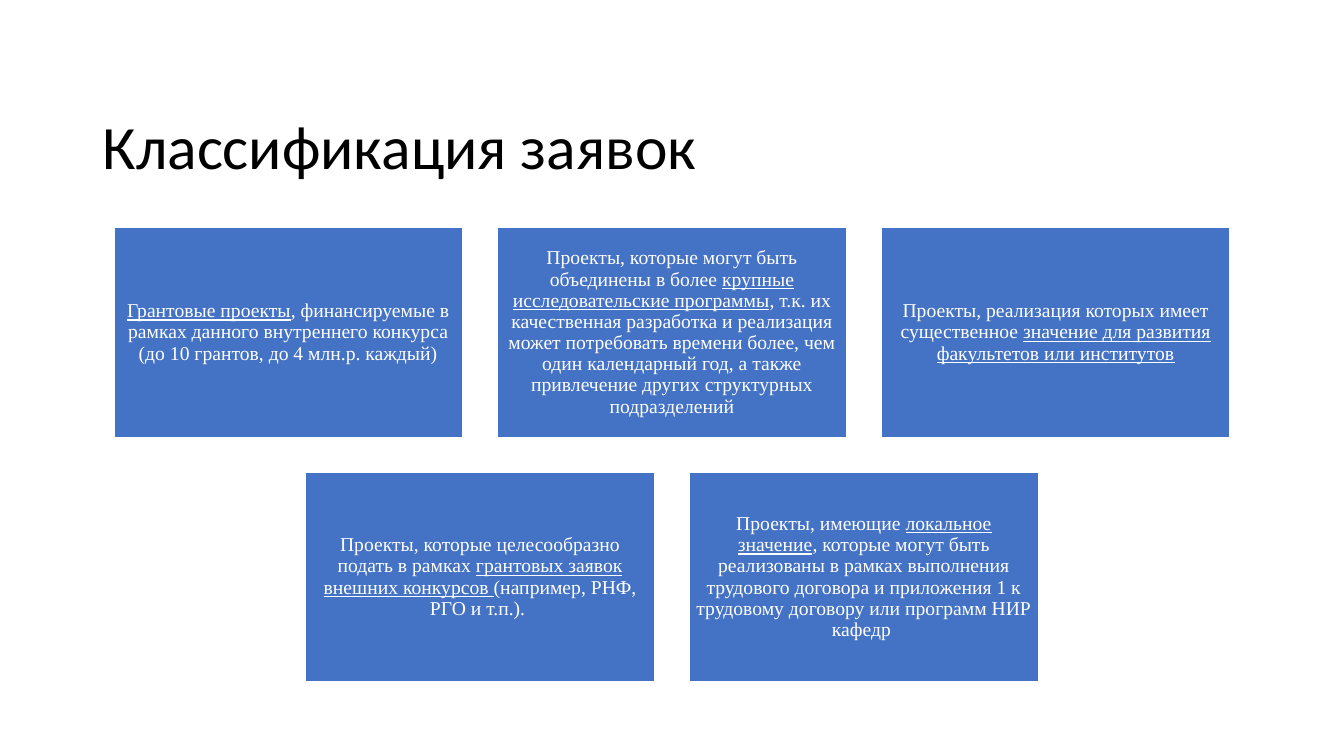
from dataclasses import dataclass

from pptx import Presentation
from pptx.dml.color import RGBColor
from pptx.enum.shapes import MSO_SHAPE as Shape
from pptx.enum.text import MSO_ANCHOR as Anchor, PP_ALIGN as Align
from pptx.util import Inches, Pt

# Content: each category is a list of (text, underlined) pieces
TITLE = "Классификация заявок"
CATEGORY_ROWS = [
    [
        [("Грантовые проекты", True),
         (", финансируемые в рамках данного внутреннего конкурса "
          "(до 10 грантов, до 4 млн.р. каждый)", False)],
        [("Проекты, которые могут быть объединены в более ", False),
         ("крупные исследовательские программы", True),
         (", т.к. их качественная разработка и реализация может потребовать "
          "времени более, чем один календарный год, а также привлечение "
          "других структурных подразделений", False)],
        [("Проекты, реализация которых имеет существенное ", False),
         ("значение для развития факультетов или институтов", True)],
    ],
    [
        [("Проекты, которые целесообразно подать в рамках ", False),
         ("грантовых заявок внешних конкурсов ", True),
         ("(например, РНФ, РГО и т.п.). ", False)],
        [("Проекты, имеющие ", False),
         ("локальное значение", True),
         (", которые могут быть реализованы в рамках выполнения трудового "
          "договора и приложения 1 к трудовому договору или программ НИР "
          "кафедр ", False)],
    ],
]


@dataclass(frozen=True)
class Theme:
    black: RGBColor = RGBColor(0x00, 0x00, 0x00)
    white: RGBColor = RGBColor(0xFF, 0xFF, 0xFF)
    blue: RGBColor = RGBColor(0x44, 0x72, 0xC4)
    title_font: str = "Calibri"
    body_font: str = "Times New Roman"
    title_size: int = 44
    body_size: int = 14


THEME = Theme()

# Layout, in inches
SLIDE_WIDTH, SLIDE_HEIGHT = 13.33, 7.5
BOX_WIDTH, BOX_HEIGHT = 3.46, 2.08
GAP = BOX_WIDTH / 10
GRID_TOP = 2.26
BOX_INSET = 0.06


def write_text(frame, pieces, *, font, size, color, align, anchor):
    """Fill a text frame with one paragraph of (text, underlined) pieces."""
    frame.word_wrap = True
    frame.vertical_anchor = anchor
    para = frame.paragraphs[0]
    para.alignment = align
    para.line_spacing = 0.9
    for text, underlined in pieces:
        span = para.add_run()
        span.text = text
        span.font.name = font
        span.font.size = Pt(size)
        span.font.color.rgb = color
        span.font.underline = underlined


def add_title(page):
    title = page.shapes.title
    title.left, title.top = Inches(0.92), Inches(0.64)
    title.width, title.height = Inches(11.5), Inches(1.22)
    write_text(title.text_frame, [(TITLE, False)], font=THEME.title_font,
               size=THEME.title_size, color=THEME.black,
               align=Align.LEFT, anchor=Anchor.BOTTOM)


def add_category(page, left, top, pieces):
    box = page.shapes.add_shape(Shape.RECTANGLE, Inches(left), Inches(top),
                                Inches(BOX_WIDTH), Inches(BOX_HEIGHT))
    box.shadow.inherit = False
    box.fill.solid()
    box.fill.fore_color.rgb = THEME.blue
    box.line.color.rgb = THEME.white
    box.line.width = Pt(1)
    frame = box.text_frame
    frame.margin_left = frame.margin_right = Inches(BOX_INSET)
    frame.margin_top = frame.margin_bottom = Inches(BOX_INSET)
    write_text(frame, pieces, font=THEME.body_font, size=THEME.body_size,
               color=THEME.white, align=Align.CENTER, anchor=Anchor.MIDDLE)


def main():
    deck = Presentation()
    deck.slide_width, deck.slide_height = Inches(SLIDE_WIDTH), Inches(SLIDE_HEIGHT)
    page = deck.slides.add_slide(deck.slide_layouts[5])
    add_title(page)

    # Category boxes, every row centred on the slide
    for row, categories in enumerate(CATEGORY_ROWS):
        row_width = len(categories) * (BOX_WIDTH + GAP) - GAP
        row_left = (SLIDE_WIDTH - row_width) / 2
        top = GRID_TOP + row * (BOX_HEIGHT + GAP)
        for column, pieces in enumerate(categories):
            add_category(page, row_left + column * (BOX_WIDTH + GAP), top, pieces)

    deck.save("out.pptx")


if __name__ == "__main__":
    main()
